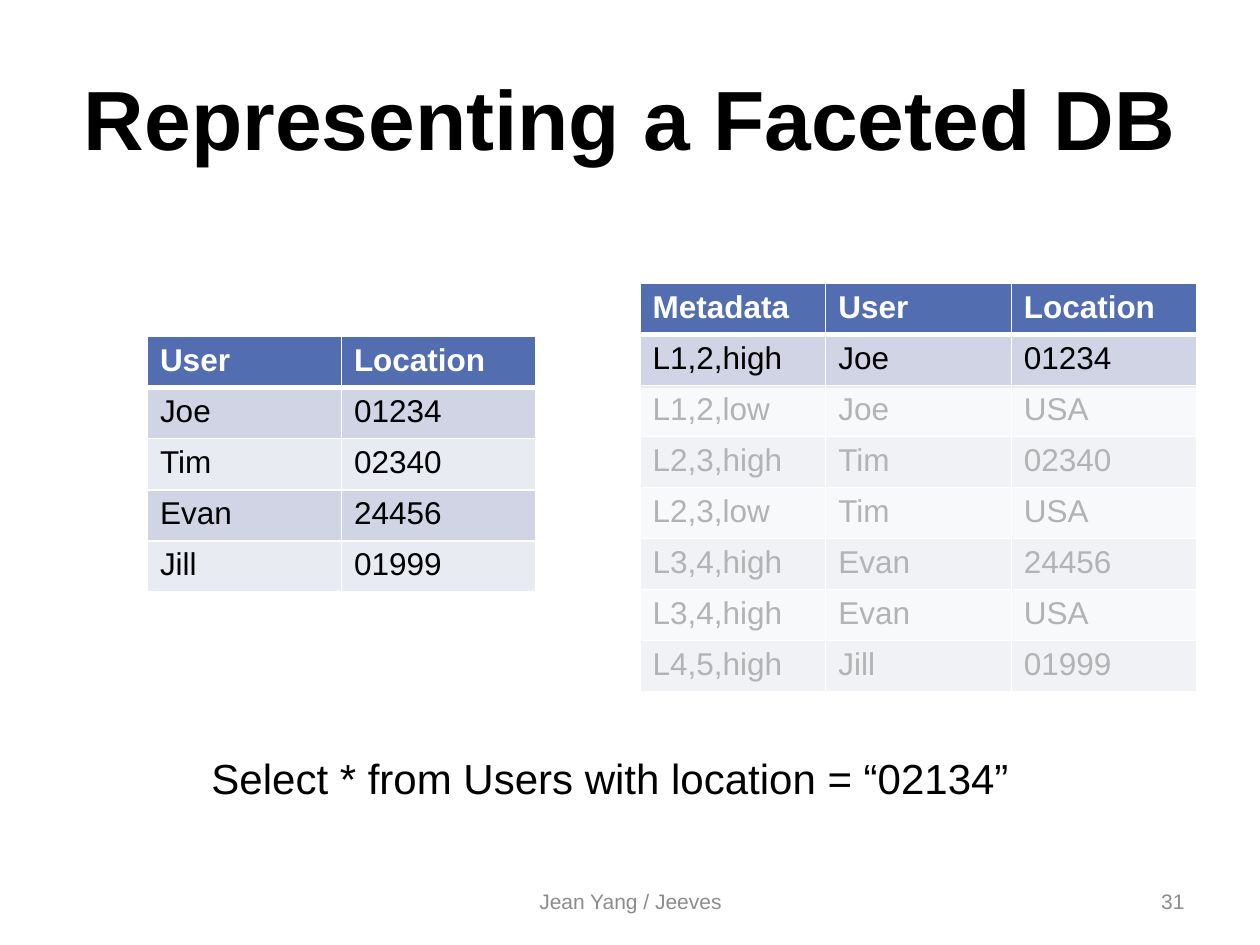
import dataclasses

import pptx
import pptx.dml.color
import pptx.enum.shapes
import pptx.enum.text
import pptx.oxml
import pptx.oxml.ns
import pptx.util

Inches = pptx.util.Inches
Pt = pptx.util.Pt
Align = pptx.enum.text.PP_ALIGN
Anchor = pptx.enum.text.MSO_ANCHOR


@dataclasses.dataclass(frozen=True)
class Theme:
    font: str = "Arial"
    ink: str = "000000"
    paper: str = "FFFFFF"
    muted: str = "8C8C8C"
    header: str = "526DB0"
    bands: tuple = ("D1D4E4", "E9EBF2")
    title_size: int = 48
    query_size: int = 24
    table_size: int = 18
    footer_size: int = 12
    rule: int = 1
    header_rule: int = 3
    veil_opacity: int = 70


THEME = Theme()
USERS = [
    ("User", "Location"),
    ("Joe", "01234"),
    ("Tim", "02340"),
    ("Evan", "24456"),
    ("Jill", "01999"),
]
FACETS = [
    ("Metadata", "User", "Location"),
    ("L1,2,high", "Joe", "01234"),
    ("L1,2,low", "Joe", "USA"),
    ("L2,3,high", "Tim", "02340"),
    ("L2,3,low", "Tim", "USA"),
    ("L3,4,high", "Evan", "24456"),
    ("L3,4,high", "Evan", "USA"),
    ("L4,5,high", "Jill", "01999"),
]


def rgb(value):
    return pptx.dml.color.RGBColor.from_string(value)


def write(frame, text, size, color, bold=False, align=Align.LEFT):
    para = frame.paragraphs[0]
    para.alignment = align
    span = para.add_run()
    span.text = text
    span.font.name = THEME.font
    span.font.size = Pt(size)
    span.font.bold = bold
    span.font.color.rgb = rgb(color)


def add_text(page, area, text, size, color=THEME.ink, bold=False,
             align=Align.LEFT, anchor=Anchor.MIDDLE):
    box = page.shapes.add_textbox(*map(Inches, area))
    box.text_frame.word_wrap = True
    box.text_frame.vertical_anchor = anchor
    write(box.text_frame, text, size, color, bold, align)


def set_borders(cell, top, bottom):
    """Draw the four cell borders; top and bottom are widths in points."""
    properties = cell._tc.get_or_add_tcPr()
    widths = {"lnL": THEME.rule, "lnR": THEME.rule, "lnT": top, "lnB": bottom}
    for place, (side, width) in enumerate(widths.items()):
        line = pptx.oxml.parse_xml(
            f'<a:{side} {pptx.oxml.ns.nsdecls("a")} w="{Pt(width)}">'
            f'<a:solidFill><a:srgbClr val="{THEME.paper}"/></a:solidFill></a:{side}>')
        properties.insert(place, line)


def add_table(page, area, records):
    """Place a table with a header row, banded body rows and equal columns."""
    left, top, width, height = map(Inches, area)
    count = len(records[0])
    table = page.shapes.add_table(len(records), count, left, top, width, height).table
    for column in table.columns:
        column.width = width // count
    for index, record in enumerate(records):
        table.rows[index].height = height // len(records)
        is_header = index == 0
        fill = THEME.header if is_header else THEME.bands[(index - 1) % 2]
        above = THEME.header_rule if index == 1 else THEME.rule
        below = THEME.header_rule if is_header else THEME.rule
        for cell, text in zip(table.rows[index].cells, record):
            cell.fill.solid()
            cell.fill.fore_color.rgb = rgb(fill)
            set_borders(cell, above, below)
            write(cell.text_frame, text, THEME.table_size,
                  THEME.paper if is_header else THEME.ink, is_header)


def add_veil(page, area):
    """Fade what lies beneath with a translucent sheet."""
    veil = page.shapes.add_shape(
        pptx.enum.shapes.MSO_SHAPE.FLOWCHART_PROCESS, *map(Inches, area))
    veil.shadow.inherit = False
    veil.line.fill.background()
    veil.fill.solid()
    veil.fill.fore_color.rgb = rgb(THEME.paper)
    color = veil._element.spPr.find(".//" + pptx.oxml.ns.qn("a:srgbClr"))
    color.append(pptx.oxml.parse_xml(
        f'<a:alpha {pptx.oxml.ns.nsdecls("a")} val="{THEME.veil_opacity * 1000}"/>'))


def main():
    deck = pptx.Presentation()
    deck.slide_width, deck.slide_height = Inches(10), Inches(7.5)
    page = deck.slides.add_slide(deck.slide_layouts[6])

    add_text(page, (0.5, 0.3, 9, 1.25), "Representing a Faceted DB",
             THEME.title_size, bold=True, align=Align.CENTER)
    add_text(page, (3.42, 6.95, 3.17, 0.4), "Jean Yang / Jeeves",
             THEME.footer_size, THEME.muted, align=Align.CENTER)
    add_text(page, (7.17, 6.95, 2.33, 0.4), "31",
             THEME.footer_size, THEME.muted, align=Align.RIGHT)
    add_table(page, (1.17, 2.67, 3.08, 2.03), USERS)
    add_table(page, (5.08, 2.25, 4.42, 3.24), FACETS)
    add_text(page, (1.58, 5.92, 6.59, 0.5),
             "Select * from Users with location = “02134”",
             THEME.query_size, anchor=Anchor.TOP)
    add_veil(page, (4.83, 3.08, 4.83, 2.58))

    deck.save("out.pptx")


if __name__ == "__main__":
    main()
